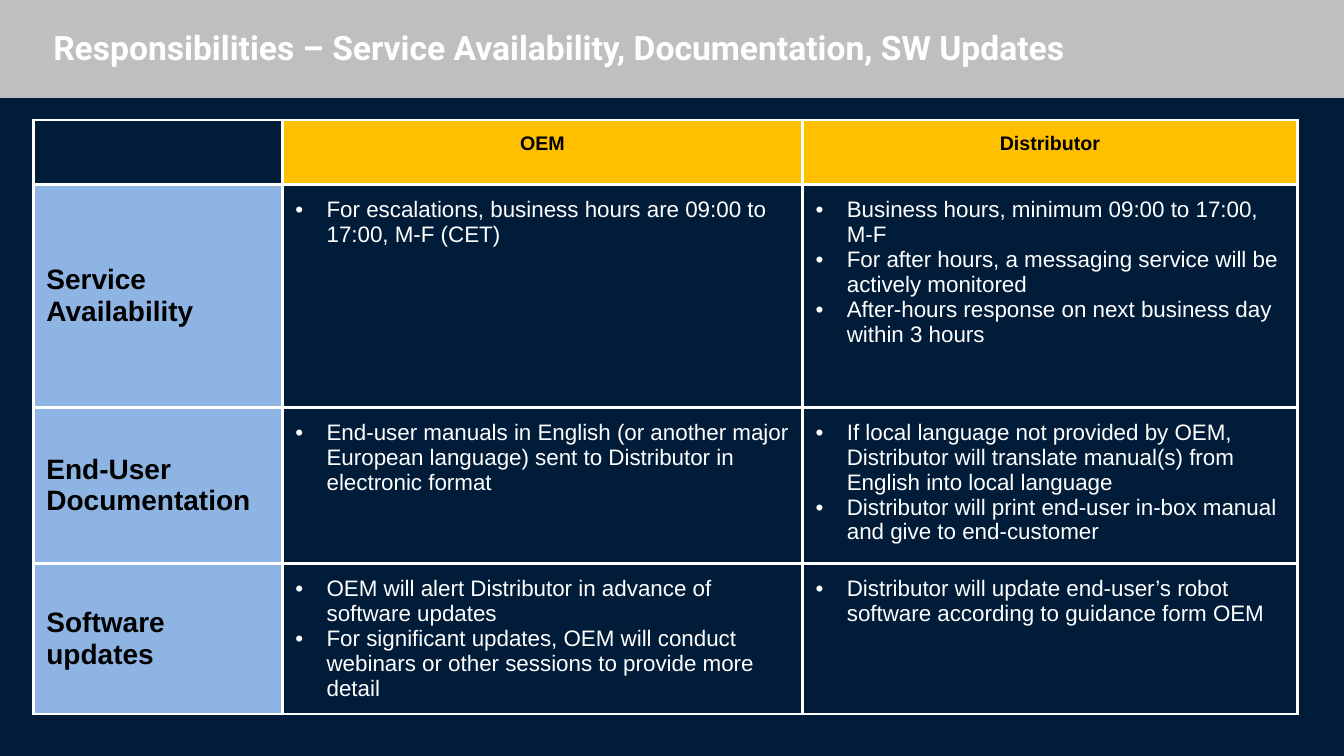
from lxml.etree import SubElement
from pptx import Presentation
from pptx.dml.color import RGBColor
from pptx.enum.shapes import MSO_SHAPE
from pptx.enum.text import MSO_ANCHOR, PP_ALIGN
from pptx.oxml.ns import qn
from pptx.util import Inches, Pt

NAVY = RGBColor(0x00, 0x1C, 0x39)
GREY = RGBColor(0xBF, 0xBF, 0xBF)
AMBER = RGBColor(0xFF, 0xC0, 0x00)
BLUE = RGBColor(0x8E, 0xB4, 0xE3)
WHITE = RGBColor(0xFF, 0xFF, 0xFF)
BLACK = RGBColor(0x00, 0x00, 0x00)

TITLE = "Responsibilities – Service Availability, Documentation, SW Updates"
PARTIES = ["OEM", "Distributor"]
DUTIES = [
    ("Service Availability",
     ["For escalations, business hours are 09:00 to 17:00, M-F (CET)"],
     ["Business hours, minimum 09:00 to 17:00, M-F",
      "For after hours, a messaging service will be actively monitored",
      "After-hours response on next business day within 3 hours"]),
    ("End-User Documentation",
     ["End-user manuals in English (or another major European language) "
      "sent to Distributor in electronic format"],
     ["If local language not provided by OEM, Distributor will translate "
      "manual(s) from English into local language",
      "Distributor will print end-user in-box manual and give to end-customer"]),
    ("Software updates",
     ["OEM will alert Distributor in advance of software updates",
      "For significant updates, OEM will conduct webinars or other sessions "
      "to provide more detail"],
     ["Distributor will update end-user’s robot software according to "
      "guidance form OEM"]),
]


class SlideBuilder:
    body_font = "Arial"
    title_font = "Roboto"
    inset = Inches(0.13)
    indent = Inches(0.31)
    border = Pt(2.25)

    def __init__(self, prs):
        self.s = prs.slides.add_slide(prs.slide_layouts[6])
        self.s.background.fill.solid()
        self.s.background.fill.fore_color.rgb = NAVY

    def run(self, p, text, size, color, bold, font):
        r = p.add_run()
        r.text = text
        r.font.name = font
        r.font.size = Pt(size)
        r.font.bold = bold
        r.font.color.rgb = color

    def band(self, x, y, w, h):
        sp = self.s.shapes.add_shape(
            MSO_SHAPE.RECTANGLE, Inches(x), Inches(y), Inches(w), Inches(h))
        sp.shadow.inherit = False
        sp.fill.solid()
        sp.fill.fore_color.rgb = GREY
        sp.line.color.rgb = GREY
        sp.line.width = Pt(2)

    def title(self, text, x, y, w, h):
        sp = self.s.shapes.add_textbox(Inches(x), Inches(y), Inches(w), Inches(h))
        tf = sp.text_frame
        tf.word_wrap = True
        tf.vertical_anchor = MSO_ANCHOR.MIDDLE
        self.run(tf.paragraphs[0], text, 24, WHITE, True, self.title_font)

    def table(self, x, y, widths, heights):
        sp = self.s.shapes.add_table(
            len(heights), len(widths), Inches(x), Inches(y),
            Inches(sum(widths)), Inches(sum(heights)))
        table = sp.table
        for column, width in zip(table.columns, widths):
            column.width = Inches(width)
        for row, height in zip(table.rows, heights):
            row.height = Inches(height)
        return table

    def cell(self, cell, texts=(), fill=NAVY, size=16, color=WHITE, bold=False,
             align=PP_ALIGN.LEFT, anchor=MSO_ANCHOR.TOP, bullets=False):
        cell.margin_left = cell.margin_right = self.inset
        cell.margin_top = cell.margin_bottom = self.inset
        cell.vertical_anchor = anchor
        self.borders(cell)
        cell.fill.solid()
        cell.fill.fore_color.rgb = fill
        tf = cell.text_frame
        for i, text in enumerate(texts):
            p = tf.add_paragraph() if i else tf.paragraphs[0]
            p.alignment = align
            if bullets:
                self.bullet(p)
            self.run(p, text, size, color, bold, self.body_font)

    def borders(self, cell):
        tcPr = cell._tc.get_or_add_tcPr()
        for side in ("a:lnL", "a:lnR", "a:lnT", "a:lnB"):
            ln = SubElement(tcPr, qn(side), w=str(self.border))
            fill = SubElement(ln, qn("a:solidFill"))
            SubElement(fill, qn("a:srgbClr"), val=str(WHITE))

    def bullet(self, p):
        pPr = p._p.get_or_add_pPr()
        pPr.set("marL", str(self.indent))
        pPr.set("indent", str(-self.indent))
        color = SubElement(pPr, qn("a:buClr"))
        SubElement(color, qn("a:srgbClr"), val=str(WHITE))
        SubElement(pPr, qn("a:buFont"), typeface=self.body_font)
        SubElement(pPr, qn("a:buChar"), char="•")


def main():
    prs = Presentation()
    prs.slide_width = Inches(13.33)
    prs.slide_height = Inches(7.5)
    slide = SlideBuilder(prs)

    slide.band(0, 0, 13.33, 0.96)
    table = slide.table(0.33, 1.19, [2.47, 5.16, 4.91], [0.64, 2.21, 1.55, 1.38])

    slide.cell(table.cell(0, 0))
    for col, party in enumerate(PARTIES, 1):
        slide.cell(table.cell(0, col), [party], AMBER, 14, BLACK, True,
                   align=PP_ALIGN.CENTER)
    for row, (topic, *duties) in enumerate(DUTIES, 1):
        slide.cell(table.cell(row, 0), [topic], BLUE, 20, BLACK, True,
                   anchor=MSO_ANCHOR.MIDDLE)
        for col, items in enumerate(duties, 1):
            slide.cell(table.cell(row, col), items, bullets=True)

    slide.title(TITLE, 0.43, 0.2, 12.29, 0.54)
    prs.save("out.pptx")


if __name__ == "__main__":
    main()
